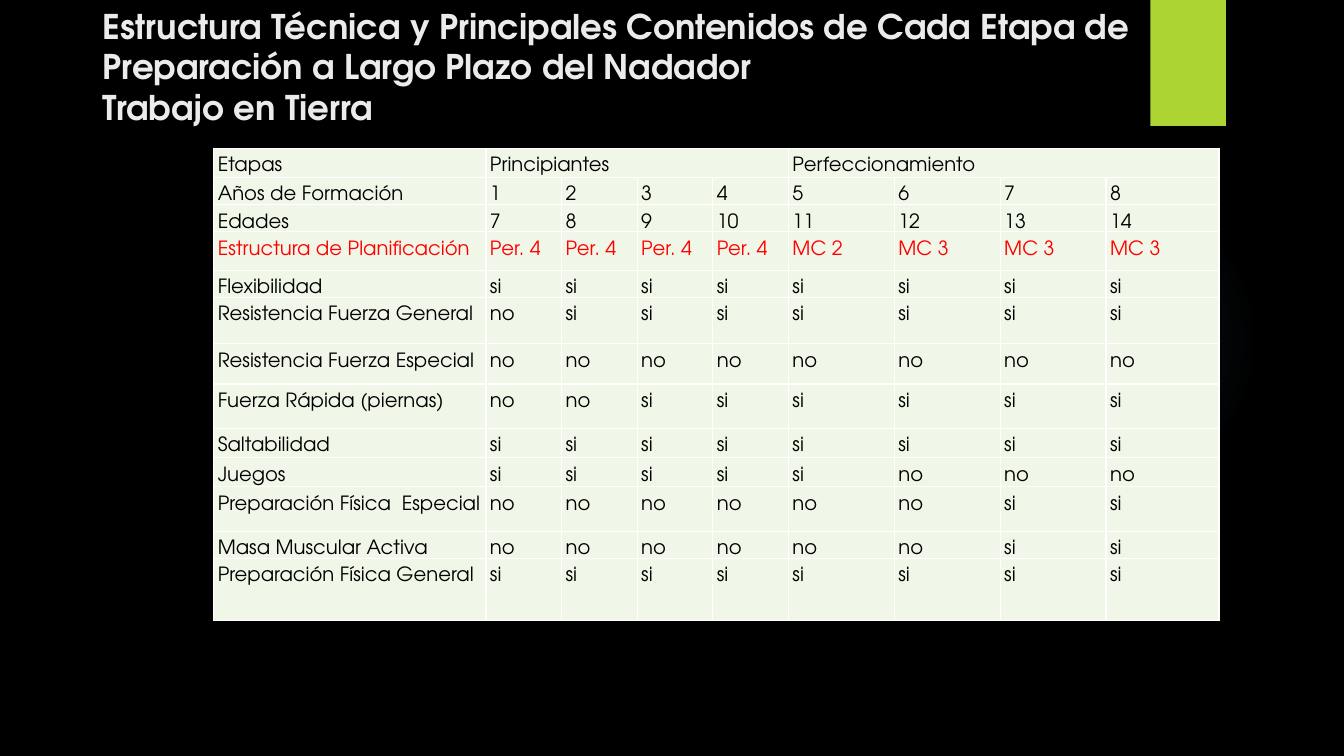
from dataclasses import dataclass

from lxml.etree import SubElement
from pptx import Presentation
from pptx.dml.color import RGBColor
from pptx.enum.shapes import MSO_SHAPE
from pptx.enum.text import MSO_ANCHOR, MSO_AUTO_SIZE, PP_ALIGN
from pptx.oxml import parse_xml
from pptx.oxml.ns import nsdecls, qn
from pptx.util import Inches, Pt


@dataclass(frozen=True)
class Theme:
    font: str = "TeX Gyre Adventor"
    background: str = "000000"
    title: str = "EBEBEB"
    accent: str = "ACD433"
    glow: str = "7AC4F0"
    cell: str = "F1F7E8"
    border: str = "FFFFFF"
    text: str = "000000"
    highlight: str = "FF0000"
    title_size: float = 24.3
    table_size: float = 14
    border_width: float = 1


THEME = Theme()

TITLE = (
    "Estructura Técnica y Principales Contenidos de Cada Etapa de "
    "Preparación a Largo Plazo del Nadador\vTrabajo en Tierra"
)
COLUMN_WIDTHS = [2.7] + [0.75] * 4 + [1.05] * 3 + [1.12]
PLANNING = "Estructura de Planificación"
STAGES = {"Principiantes": (1, 4), "Perfeccionamiento": (5, 8)}


def yes_from(year):
    """Answers for the eight years: no before the given year, si from it on."""
    return ["no"] * (year - 1) + ["si"] * (9 - year)


# Label, values for the eight years, row height in inches
ROWS = [
    ("Años de Formación", [str(year) for year in range(1, 9)], 0.27),
    ("Edades", [str(age) for age in range(7, 15)], 0.27),
    (PLANNING, ["Per. 4"] * 4 + ["MC 2"] + ["MC 3"] * 3, 0.38),
    ("Flexibilidad", yes_from(1), 0.22),
    ("Resistencia Fuerza General", yes_from(2), 0.46),
    ("Resistencia Fuerza Especial", yes_from(9), 0.4),
    ("Fuerza Rápida (piernas)", yes_from(3), 0.44),
    ("Saltabilidad", yes_from(1), 0.29),
    ("Juegos", ["si"] * 5 + ["no"] * 3, 0.29),
    ("Preparación Física  Especial", yes_from(7), 0.44),
    ("Masa Muscular Activa", yes_from(7), 0.23),
    ("Preparación Física General", yes_from(1), 0.62),
]
HEADER_HEIGHT = 0.29


def rgb(color):
    return RGBColor.from_string(color)


def style_runs(paragraph, size, color, bold=False):
    for run in paragraph.runs:
        run.font.name = THEME.font
        run.font.size = Pt(size)
        run.font.bold = bold
        run.font.color.rgb = rgb(color)


def add_plain_shape(slide, preset, left, top, width, height, color):
    shape = slide.shapes.add_shape(
        preset, Inches(left), Inches(top), Inches(width), Inches(height)
    )
    shape.shadow.inherit = False
    shape.line.fill.background()
    shape.fill.solid()
    shape.fill.fore_color.rgb = rgb(color)
    return shape


def add_glow(slide):
    """Faint round light that fades out from its centre."""
    glow = add_plain_shape(slide, MSO_SHAPE.OVAL, 9.41, 1.83, 3.08, 3.08, THEME.glow)
    stops = "".join(
        f'<a:gs pos="{position * 1000}"><a:srgbClr val="{THEME.glow}">'
        f'<a:alpha val="{opacity * 1000}"/></a:srgbClr></a:gs>'
        for position, opacity in ((0, 7), (36, 6), (69, 0))
    )
    gradient = parse_xml(
        f'<a:gradFill {nsdecls("a")}><a:gsLst>{stops}</a:gsLst><a:path path="circle">'
        '<a:fillToRect l="50000" t="50000" r="50000" b="50000"/></a:path></a:gradFill>'
    )
    properties = glow.element.spPr
    properties.replace(properties.find(qn("a:solidFill")), gradient)


def set_title(slide):
    title = slide.shapes.title
    title.left, title.top = Inches(0.92), Inches(0)
    title.width, title.height = Inches(11.5), Inches(1.24)
    frame = title.text_frame
    frame.text = TITLE
    frame.word_wrap = True
    frame.auto_size = MSO_AUTO_SIZE.NONE
    frame.vertical_anchor = MSO_ANCHOR.TOP
    frame.paragraphs[0].alignment = PP_ALIGN.LEFT
    style_runs(frame.paragraphs[0], THEME.title_size, THEME.title, bold=True)


def add_borders(cell):
    properties = cell._tc.get_or_add_tcPr()
    for side in ("a:lnL", "a:lnR", "a:lnT", "a:lnB"):
        line = SubElement(properties, qn(side), w=str(Pt(THEME.border_width)))
        fill = SubElement(line, qn("a:solidFill"))
        SubElement(fill, qn("a:srgbClr"), val=THEME.border)


def format_cell(cell, text, color):
    add_borders(cell)
    cell.fill.solid()
    cell.fill.fore_color.rgb = rgb(THEME.cell)
    cell.margin_left = cell.margin_right = Inches(0.04)
    cell.margin_top = cell.margin_bottom = Inches(0)
    cell.text_frame.text = text
    paragraph = cell.text_frame.paragraphs[0]
    paragraph.line_spacing = 1.5
    style_runs(paragraph, THEME.table_size, color)


def add_stage_table(slide):
    header = ["Etapas"] + [""] * 8
    for stage, (first, _) in STAGES.items():
        header[first] = stage
    rows = [(header, HEADER_HEIGHT)]
    rows += [([label, *values], height) for label, values, height in ROWS]

    frame = slide.shapes.add_table(
        len(rows), len(COLUMN_WIDTHS),
        Inches(2.12), Inches(1.47), Inches(9.97), Inches(5.18),
    )
    table = frame.table
    for column, width in zip(table.columns, COLUMN_WIDTHS):
        column.width = Inches(width)
    for row, (texts, height) in zip(table.rows, rows):
        row.height = Inches(height)
        color = THEME.highlight if texts[0] == PLANNING else THEME.text
        for cell, text in zip(row.cells, texts):
            format_cell(cell, text, color)
    for first, last in STAGES.values():
        table.cell(0, first).merge(table.cell(0, last))
    frame.height = Inches(5.18)


def main():
    presentation = Presentation()
    presentation.slide_width = Inches(13.33)
    presentation.slide_height = Inches(7.5)
    slide = presentation.slides.add_slide(presentation.slide_layouts[5])
    slide.background.fill.solid()
    slide.background.fill.fore_color.rgb = rgb(THEME.background)

    add_glow(slide)
    add_plain_shape(slide, MSO_SHAPE.RECTANGLE, 11.41, 0, 0.75, 1.25, THEME.accent)
    set_title(slide)
    add_stage_table(slide)
    presentation.save("out.pptx")


if __name__ == "__main__":
    main()
